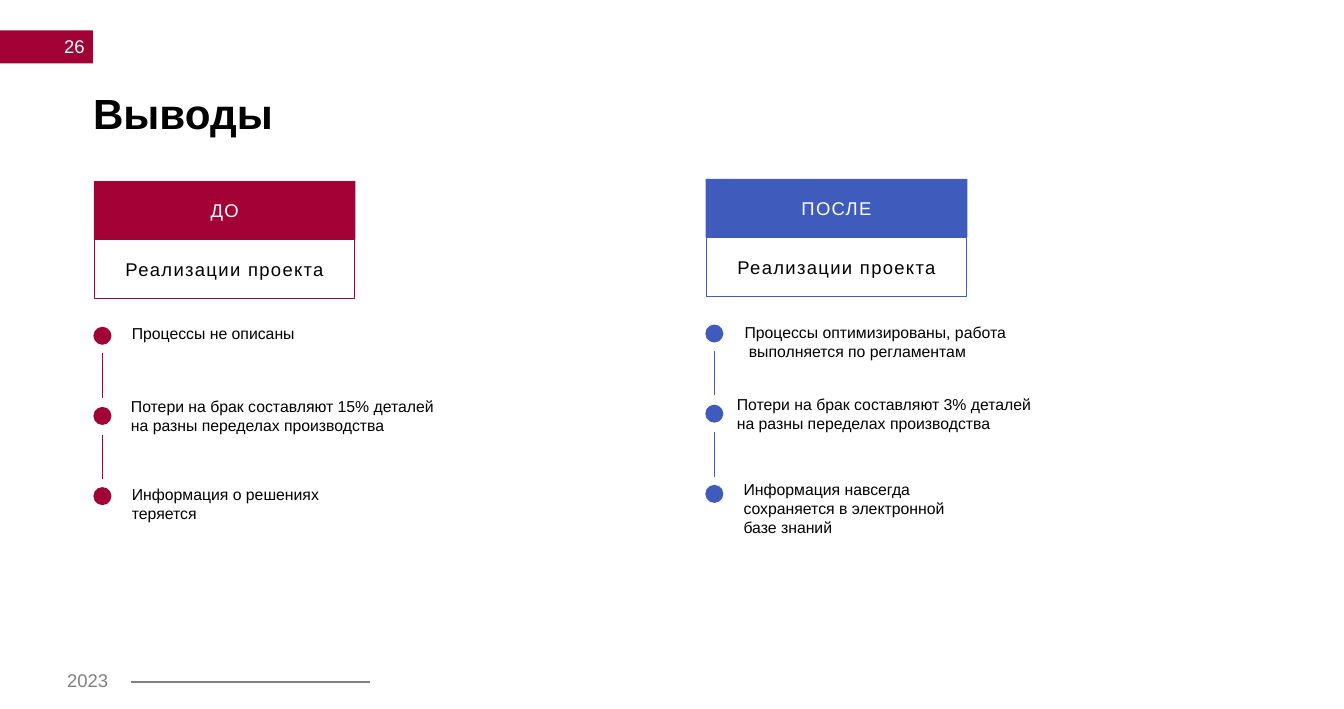
from pptx import Presentation
from pptx.dml.color import RGBColor
from pptx.enum.shapes import MSO_CONNECTOR, MSO_SHAPE
from pptx.enum.text import MSO_ANCHOR, MSO_AUTO_SIZE, PP_ALIGN
from pptx.oxml.ns import qn
from pptx.util import Pt
from lxml.etree import SubElement

COLORS = {
    "crimson": "A30236",
    "blue": "3F5CBD",
    "gray": "808080",
    "black": "000000",
    "white": "FFFFFF",
}


def color(name):
    return RGBColor.from_string(COLORS[name])


def write(frame, text, size=12, ink="black", bold=False, align=PP_ALIGN.LEFT,
          anchor=MSO_ANCHOR.TOP, spacing=0, leading=1.0, indents=(), inset=0):
    frame.word_wrap = True
    frame.auto_size = MSO_AUTO_SIZE.NONE
    frame.vertical_anchor = anchor
    frame.margin_left = frame.margin_right = Pt(inset)
    frame.margin_top = frame.margin_bottom = Pt(inset / 2)
    for index, line in enumerate(text.split("\n")):
        para = frame.add_paragraph() if index else frame.paragraphs[0]
        para.alignment = align
        para.line_spacing = leading
        if indents:
            properties = para._p.get_or_add_pPr()
            properties.set("marL", str(Pt(indents[index])))
            properties.set("indent", "0")
        span = para.add_run()
        span.text = line
        span.font.name = "Arial"
        span.font.size = Pt(size)
        span.font.bold = bold
        span.font.color.rgb = color(ink)
        if spacing:
            span._r.get_or_add_rPr().set("spc", str(spacing * 100))


class SlideBuilder:
    def __init__(self, page):
        self.page = page

    def title(self, text, left, top, width, height, **style):
        box = self.page.shapes.title
        box.left, box.top, box.width, box.height = map(Pt, (left, top, width, height))
        write(box.text_frame, text, **style)

    def text(self, text, left, top, width, height, **style):
        box = self.page.shapes.add_textbox(*map(Pt, (left, top, width, height)))
        write(box.text_frame, text, **style)

    def shape(self, kind, left, top, width, height, fill=None, outline=None):
        shape = self.page.shapes.add_shape(kind, *map(Pt, (left, top, width, height)))
        shape.shadow.inherit = False
        if fill:
            shape.fill.solid()
            shape.fill.fore_color.rgb = color(fill)
        else:
            shape.fill.background()
        if outline:
            shape.line.color.rgb = color(outline)
            shape.line.width = Pt(1)
        else:
            shape.line.fill.background()
        return shape

    def line(self, x1, y1, x2, y2, ink, width=1):
        line = self.page.shapes.add_connector(
            MSO_CONNECTOR.STRAIGHT, *map(Pt, (x1, y1, x2, y2)))
        line.line.color.rgb = color(ink)
        line.line.width = Pt(width)
        SubElement(line._element.spPr, qn("a:effectLst"))

    def label(self, text, left, top, width, ink, **look):
        box = self.shape(MSO_SHAPE.RECTANGLE, left, top, width, 44.6, **look)
        write(box.text_frame, text, size=14, ink=ink, align=PP_ALIGN.CENTER,
              anchor=MSO_ANCHOR.MIDDLE, spacing=1, inset=7.2)

    def column(self, heading, theme, left, top, notes):
        self.label(heading, left, top, 198.7, "white", fill=theme)
        self.label("Реализации проекта", left + 0.7, top + 44.6, 197.3,
                   "black", outline=theme)
        for step in range(3):
            self.shape(MSO_SHAPE.OVAL, left - 0.3, top + 110.7 + 60.9 * step,
                       13.7, 13.7, fill=theme)
        for step in range(2):
            start = top + 130.8 + 61.9 * step
            self.line(left + 6.5, start, left + 6.5, start + 33.8, theme)
        for text, x, y, width, height, indents in notes:
            self.text(text, x, y, width, height, indents=indents)


def main():
    deck = Presentation()
    deck.slide_width = Pt(1020.24)
    deck.slide_height = Pt(538.56)
    page = deck.slides.add_slide(deck.slide_layouts[5])
    builder = SlideBuilder(page)

    builder.shape(MSO_SHAPE.RECTANGLE, 0, 23, 70.6, 25.2, fill="crimson")
    builder.text("26", 13, 20.9, 58.3, 28.8, size=14, ink="white",
                 align=PP_ALIGN.RIGHT, anchor=MSO_ANCHOR.MIDDLE, inset=7.2)
    builder.title("Выводы", 70.6, 70.6, 753.8, 56.2, size=32, bold=True, leading=0.9)

    builder.column("ДО", "crimson", 71.2, 137.5, [
        ("Процессы не описаны", 100.1, 246.2, 170.6, 23, ()),
        ("Потери на брак составляют 15% деталей на разны переделах производства",
         99.4, 301.7, 235.4, 36.7, ()),
        ("Информация о решениях теряется", 100.1, 367.9, 170.6, 26.6, ()),
    ])
    builder.column("ПОСЛЕ", "blue", 535.7, 135.8, [
        ("Процессы оптимизированы, работа\nвыполняется по регламентам",
         565.2, 244.8, 243.4, 58.3, (0, 3.3)),
        ("Потери на брак составляют 3% деталей на разны переделах производства",
         559.4, 300.2, 235.4, 36.7, ()),
        ("Информация навсегда сохраняется в электронной базе знаний",
         564.5, 364.3, 170.6, 45.4, ()),
    ])

    builder.text("2023", 43.9, 504.7, 48.2, 24.5, size=14, ink="gray", inset=7.2)
    builder.line(99.4, 517.7, 280.8, 517.7, "gray", 1.5)
    deck.save("out.pptx")


if __name__ == "__main__":
    main()
